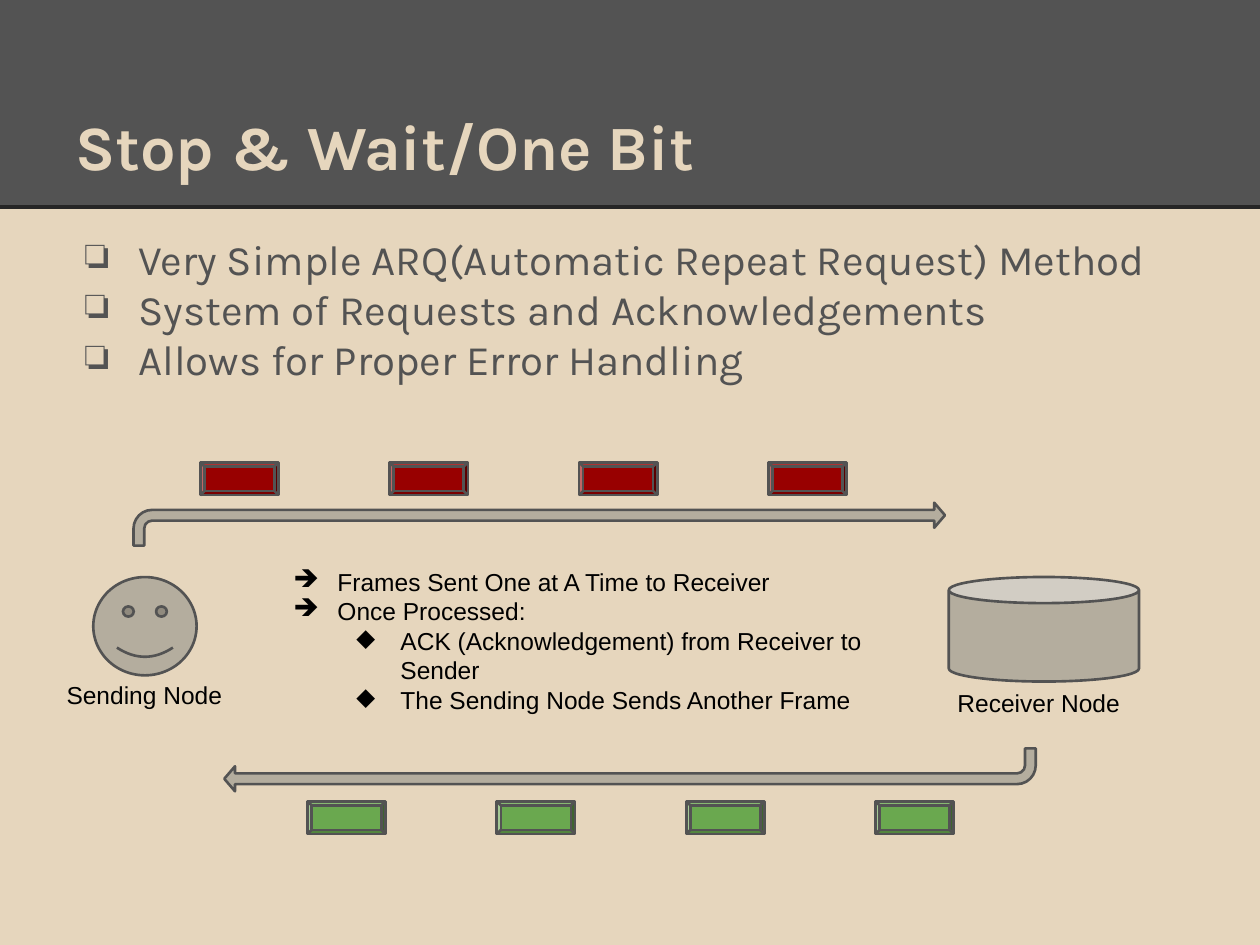
import pptx
import pptx.util
import pptx.dml.color
import pptx.enum.shapes
import pptx.enum.text
import pptx.oxml.ns
from lxml import etree

Inches, Pt = pptx.util.Inches, pptx.util.Pt
SHAPE = pptx.enum.shapes.MSO_SHAPE
ANCHOR = pptx.enum.text.MSO_ANCHOR
qn = pptx.oxml.ns.qn

# Content
TITLE = "Stop & Wait/One Bit"
# (text, level, bullet)
FEATURES = [
    ("Very Simple ARQ(Automatic Repeat Request) Method", 0, "❏"),
    ("System of Requests and Acknowledgements", 0, "❏"),
    ("Allows for Proper Error Handling", 0, "❏"),
]
STEPS = [
    ("Frames Sent One at A Time to Receiver", 0, "➔"),
    ("Once Processed:", 0, "➔"),
    ("ACK (Acknowledgement) from Receiver to Sender", 1, "◆"),
    ("The Sending Node Sends Another Frame", 1, "◆"),
]
# (preset, box, adjustments, label, label box)
NODES = [
    (SHAPE.SMILEY_FACE, (0.74, 4.58, 0.82, 0.78), [0.047],
     "Sending Node", (0.43, 5.3, 1.57, 0.38)),
    (SHAPE.CAN, (7.53, 4.58, 1.51, 0.83), [0.25],
     "Receiver Node", (7.5, 5.36, 1.82, 0.24)),
]
# (arrow left, arrow top, rotation, first packet left, packet top, packet colour)
FLOWS = [
    (1.06, 3.99, 0, 1.59, 3.67, "frame"),
    (1.78, 5.94, 180, 2.44, 6.36, "ack"),
]
PACKETS, PACKET_STEP = 4, 1.503
COLORS = {
    "sand": "E6D6BD", "slate": "535353", "rule": "262626", "node": "B4AD9E",
    "frame": "980000", "ack": "6AA84F", "black": "000000",
}


def rgb(name):
    return pptx.dml.color.RGBColor.from_string(COLORS[name])


def add_figure(slide, preset, box, fill, adjustments=(), outline="slate"):
    figure = slide.shapes.add_shape(preset, *map(Inches, box))
    figure.shadow.inherit = False
    figure.fill.solid()
    figure.fill.fore_color.rgb = rgb(fill)
    if outline:
        figure.line.color.rgb = rgb(outline)
        figure.line.width = Pt(1.5)
    else:
        figure.line.fill.background()
    for i, value in enumerate(adjustments):
        figure.adjustments[i] = value
    return figure


def set_bullet(paragraph, symbol, color, margin, hanging):
    props = paragraph._p.get_or_add_pPr()
    props.set("marL", str(Inches(margin)))
    props.set("indent", str(-Inches(hanging)))
    bullet_color = etree.SubElement(props, qn("a:buClr"))
    etree.SubElement(bullet_color, qn("a:srgbClr"), val=COLORS[color])
    etree.SubElement(props, qn("a:buChar"), char=symbol)


def add_text(slide, box, items, size, font, color, bold=False,
             hanging=0.35, anchor=ANCHOR.TOP):
    frame = slide.shapes.add_textbox(*map(Inches, box)).text_frame
    frame.word_wrap = True
    frame.vertical_anchor = anchor
    frame.margin_left = frame.margin_right = Inches(0.1)
    frame.margin_top = frame.margin_bottom = Inches(0.1)
    for i, (text, level, symbol) in enumerate(items):
        paragraph = frame.paragraphs[0] if i == 0 else frame.add_paragraph()
        paragraph.text = text
        paragraph.level = level
        paragraph.font.size = Pt(size)
        paragraph.font.name = font
        paragraph.font.bold = bold
        paragraph.font.color.rgb = rgb(color)
        if symbol:
            set_bullet(paragraph, symbol, color, 0.5 * (level + 1), hanging)


def main():
    deck = pptx.Presentation()
    deck.slide_width, deck.slide_height = Inches(10), Inches(7.5)
    slide = deck.slides.add_slide(deck.slide_layouts[6])
    slide.background.fill.solid()
    slide.background.fill.fore_color.rgb = rgb("sand")

    # Header band and rule
    add_figure(slide, SHAPE.RECTANGLE, (0, 0, 10, 1.64), "slate", outline=None)
    rule = slide.shapes.add_connector(
        pptx.enum.shapes.MSO_CONNECTOR.STRAIGHT,
        *map(Inches, (0, 1.64, 10, 1.64)))
    rule.line.color.rgb = rgb("rule")
    rule.line.width = Pt(2.25)
    etree.SubElement(rule._element.spPr, qn("a:effectLst"))

    # Title and features
    add_text(slide, (0.5, 0.3, 9, 1.25), [(TITLE, 0, None)], 36, "Karla",
             "sand", bold=True, anchor=ANCHOR.BOTTOM)
    add_text(slide, (0.5, 1.75, 9, 5.43), FEATURES, 24, "Karla", "slate",
             hanging=0.42)

    # Nodes with labels
    for preset, box, adjustments, label, label_box in NODES:
        add_figure(slide, preset, box, "node", adjustments)
        add_text(slide, label_box, [(label, 0, None)], 14, "Arial", "black")

    # Arrows with their packets
    for left, top, rotation, packet_left, packet_top, color in FLOWS:
        arrow = add_figure(slide, SHAPE.BENT_ARROW, (left, top, 6.44, 0.34),
                           "node", [0.25, 0.292, 0.25, 0.438])
        arrow.rotation = rotation
        for i in range(PACKETS):
            add_figure(slide, SHAPE.BEVEL,
                       (packet_left + i * PACKET_STEP, packet_top, 0.62, 0.26),
                       color, [0.125])

    # Steps between the nodes
    add_text(slide, (2.08, 4.4, 5.13, 1.43), STEPS, 14, "Arial", "black")

    deck.save("out.pptx")


if __name__ == "__main__":
    main()
